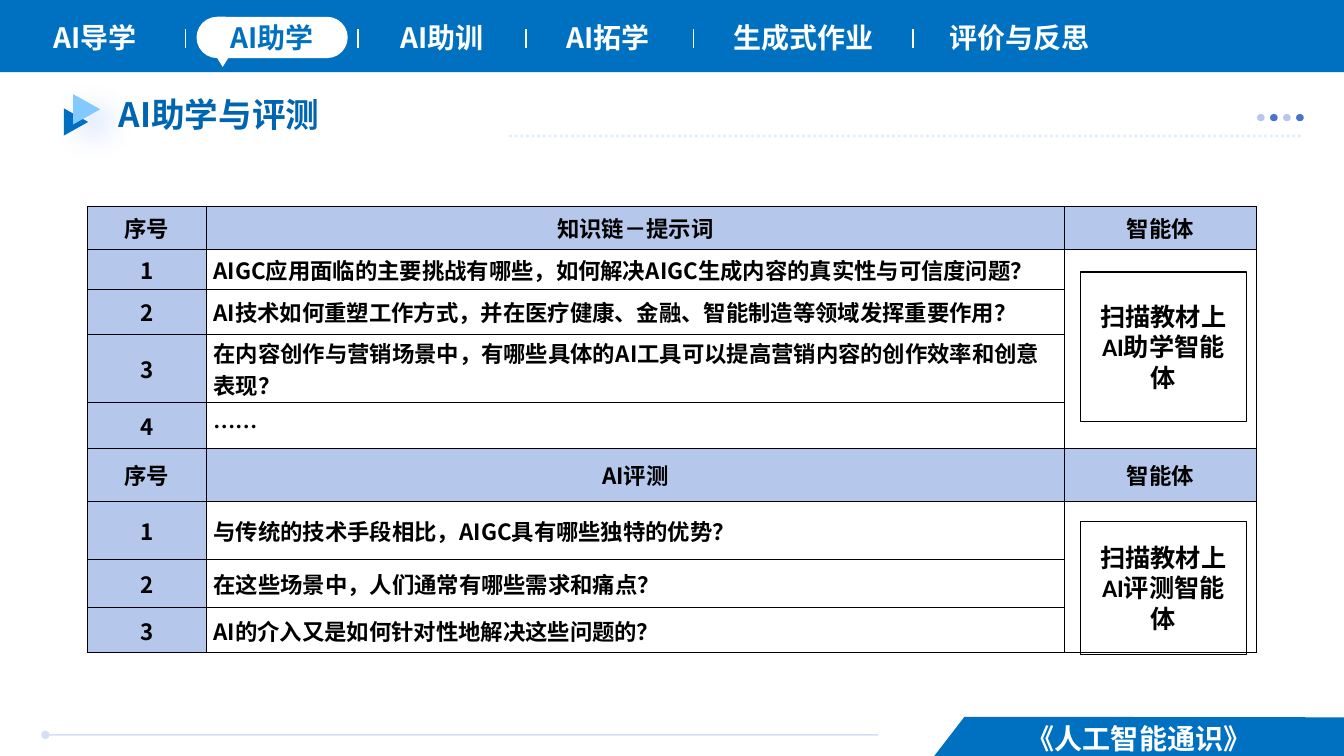
from dataclasses import dataclass

from lxml import etree
from pptx import Presentation, util as u
from pptx.dml.color import RGBColor
from pptx.enum import dml, shapes, text
from pptx.oxml import ns

Pt = u.Pt
KIND = shapes.MSO_SHAPE
ALIGN = text.PP_ALIGN
MIDDLE = text.MSO_ANCHOR.MIDDLE


@dataclass(frozen=True)
class Theme:
    blue: str = "0070C0"
    title_blue: str = "0065B0"
    sky: str = "81C9FF"
    glow: str = "1469FF"
    pale: str = "B5C7EA"
    dot_light: str = "B6C7EA"
    dot_dark: str = "4874CB"
    dotted: str = "B9D2F9"
    footer_line: str = "3D70DA"
    border: str = "000008"
    white: str = "FFFFFF"
    black: str = "000000"
    font: str = "Noto Sans CJK SC"
    card_font: str = "Calibri"
    title_size: float = 24
    tab_size: float = 20
    card_size: float = 18
    cell_size: float = 16


THEME = Theme()


@dataclass(frozen=True)
class Box:
    left: float
    top: float
    width: float
    height: float

    def inner(self, dx, dy, width, height):
        return Box(self.left + dx, self.top + dy, width, height)

    def lengths(self):
        return [Pt(n) for n in (self.left, self.top, self.width, self.height)]


def add_xml(parent, tag, **attributes):
    return etree.SubElement(parent, ns.qn(tag), attributes)


def write(frame, lines, size, color, latin=THEME.font, align=ALIGN.CENTER, spacing=None):
    for index, line in enumerate(lines.split("\n")):
        para = frame.paragraphs[0] if index == 0 else frame.add_paragraph()
        para.alignment = align
        if spacing:
            para.line_spacing = spacing
        span = para.add_run()
        span.text = line
        span.font.size, span.font.bold, span.font.name = Pt(size), True, latin
        span.font.color.rgb = RGBColor.from_string(color)
        add_xml(span.font._element, "a:ea", typeface=THEME.font)


def add_label(page, box, lines, size, color, anchor=MIDDLE, **form):
    frame = page.shapes.add_textbox(*box.lengths()).text_frame
    frame.word_wrap = True
    frame.vertical_anchor = anchor
    write(frame, lines, size, color, **form)


def paint(shape, fill=None, line=None):
    shape.shadow.inherit = False
    if fill:
        shape.fill.solid()
        shape.fill.fore_color.rgb = RGBColor.from_string(fill)
    else:
        shape.fill.background()
    if line:
        shape.line.color.rgb = RGBColor.from_string(line)
        shape.line.width = Pt(1)
    else:
        shape.line.fill.background()
    return shape


def add_shape(page, kind, box, rotation=0, **style):
    shape = paint(page.shapes.add_shape(kind, *box.lengths()), **style)
    shape.rotation = rotation
    return shape


def add_line(page, x1, y1, x2, y2, color, width=1, alpha=None, dash=None, head=None):
    line = page.shapes.add_connector(
        shapes.MSO_CONNECTOR.STRAIGHT, Pt(x1), Pt(y1), Pt(x2), Pt(y2))
    line.line.color.rgb = RGBColor.from_string(color)
    line.line.width = Pt(width)
    if dash:
        line.line.dash_style = dash
    properties = line._element.spPr
    if alpha:
        tint = properties.find(".//" + ns.qn("a:srgbClr"))
        add_xml(tint, "a:alpha", val=str(alpha * 1000))
    if head:
        add_xml(properties.find(ns.qn("a:ln")), "a:headEnd", type=head)
    add_xml(properties, "a:effectLst")


def add_glow(shape):
    effects = shape._element.spPr.find(ns.qn("a:effectLst"))
    shadow = add_xml(effects, "a:outerShdw", blurRad=str(Pt(22)), dist=str(Pt(12)),
                     dir=str(45 * 60000), algn="ctr", rotWithShape="0")
    tint = add_xml(shadow, "a:srgbClr", val=THEME.glow)
    add_xml(tint, "a:alpha", val="30000")


def build_navigation(page, box):
    add_shape(page, KIND.RECTANGLE, box, fill=THEME.blue)
    tabs = [("AI导学", 12.2, 111.6), ("AI助训", 260, 111.6), ("AI拓学", 379.4, 110.2),
            ("生成式作业", 499, 149.8), ("评价与反思", 655.2, 146.2)]
    for label, left, width in tabs:
        add_label(page, box.inner(left, 10.8, width, 31.7), label, THEME.tab_size, THEME.white)
    for x in (132.5, 255.6, 375.8, 495.4, 652.3):
        add_line(page, box.left + x, box.top + 20.9, box.left + x, box.top + 34.6, THEME.white)
    bubble = add_shape(page, KIND.ROUNDED_RECTANGLE, box.inner(140.4, 12, 108, 29.5),
                       fill=THEME.white)
    bubble.adjustments[0] = 0.5
    bubble.text_frame.vertical_anchor = MIDDLE
    write(bubble.text_frame, "AI助学", THEME.tab_size, THEME.blue)
    add_shape(page, KIND.FLOWCHART_MERGE, box.inner(154.8, 41, 8.6, 6.8), fill=THEME.white)


def build_heading(page, box):
    add_shape(page, KIND.FLOWCHART_EXTRACT, box.inner(0, 11.5, 19.4, 17.3), 90, fill=THEME.blue)
    add_glow(add_shape(page, KIND.FLOWCHART_EXTRACT, box.inner(6.5, 1.4, 21.6, 19.4), 90,
                       fill=THEME.sky))
    add_label(page, box.inner(33.1, 0, 597.6, 51.8), "AI助学与评测", THEME.title_size,
              THEME.title_blue, anchor=text.MSO_ANCHOR.TOP, align=ALIGN.LEFT, spacing=0.9)
    right, bottom = box.left + box.width, box.top + 30.2
    add_line(page, box.left + 319, bottom, right, bottom, THEME.dotted, width=2, alpha=40,
             dash=dml.MSO_LINE.ROUND_DOT)
    for index in range(4):
        color = THEME.dot_dark if index % 2 else THEME.dot_light
        add_shape(page, KIND.OVAL, box.inner(853.3 + index * 9.3, 14.4, 5.5, 5.2), fill=color)


def draw_borders(cell):
    properties = cell._tc.get_or_add_tcPr()
    for side in ("a:lnL", "a:lnR", "a:lnT", "a:lnB"):
        edge = add_xml(properties, side, w=str(Pt(0.5)))
        add_xml(add_xml(edge, "a:solidFill"), "a:srgbClr", val=THEME.border)


def fill_cell(cell, content, shaded, align):
    draw_borders(cell)
    cell.margin_left = cell.margin_right = Pt(5)
    cell.margin_top = cell.margin_bottom = 0
    cell.vertical_anchor = MIDDLE
    if shaded:
        cell.fill.solid()
        cell.fill.fore_color.rgb = RGBColor.from_string(THEME.pale)
    else:
        cell.fill.background()
    if content:
        write(cell.text_frame, content, THEME.cell_size, THEME.black, align=align)


def build_table(page, box):
    rows = [
        ("序号", "知识链－提示词", "智能体"),
        ("1", "AIGC应用面临的主要挑战有哪些，如何解决AIGC生成内容的真实性与可信度问题？", ""),
        ("2", "AI技术如何重塑工作方式，并在医疗健康、金融、智能制造等领域发挥重要作用？", ""),
        ("3", "在内容创作与营销场景中，有哪些具体的AI工具可以提高营销内容的创作效率和创意表现？", ""),
        ("4", "……", ""),
        ("序号", "AI评测", "智能体"),
        ("1", "与传统的技术手段相比，AIGC具有哪些独特的优势？", ""),
        ("2", "在这些场景中，人们通常有哪些需求和痛点？", ""),
        ("3", "AI的介入又是如何针对性地解决这些问题的？", ""),
    ]
    table = page.shapes.add_table(len(rows), 3, *box.lengths()).table
    table.first_row = table.horz_banding = False
    for column, width in zip(table.columns, (85.2, 612.6, 137.2)):
        column.width = Pt(width)
    for row, height in zip(table.rows, (30.7, 29.1, 32, 48.7, 32.9, 37.6, 41.6, 34.4, 32.2)):
        row.height = Pt(height)
    for r, row in enumerate(rows):
        heading = row[0] == "序号"
        for c, content in enumerate(row):
            align = ALIGN.LEFT if c == 1 and not heading else ALIGN.CENTER
            fill_cell(table.cell(r, c), content, heading or c == 0, align)
    for first, last in ((1, 4), (6, 8)):
        table.cell(first, 2).merge(table.cell(last, 2))
    for topic, top, height in (("助学", 47.2, 106.6), ("评测", 225.2, 95)):
        card = add_shape(page, KIND.RECTANGLE, box.inner(709.2, top, 118.8, height),
                         line=THEME.black)
        card.text_frame.word_wrap = True
        card.text_frame.vertical_anchor = MIDDLE
        write(card.text_frame, f"扫描教材上\nAI{topic}智能体", THEME.card_size, THEME.black,
              latin=THEME.card_font)


def build_footer(page, box):
    left, top = box.left + 667.4, box.top
    right, bottom = box.left + box.width, box.top + box.height
    ribbon = page.shapes.build_freeform(Pt(left + 21.6), Pt(top))
    ribbon.add_line_segments([(Pt(right), Pt(top + 0.4)), (Pt(right), Pt(bottom)),
                              (Pt(left), Pt(bottom))])
    paint(ribbon.convert_to_shape(), fill=THEME.blue)
    add_line(page, box.left + 32.4, top + 12.9, box.left + 627.1, top + 12.9,
             THEME.footer_line, alpha=22, head="oval")
    add_label(page, box.inner(667.4, -0.8, 292.6, 31.7), "《人工智能通识》",
              THEME.tab_size, THEME.white)


def main():
    deck = Presentation()
    deck.slide_width, deck.slide_height = Pt(960), Pt(540)
    page = deck.slides.add_slide(deck.slide_layouts[6])
    build_navigation(page, Box(0, 0, 960, 51.6))
    build_heading(page, Box(44.6, 67, 886.4, 51.8))
    build_table(page, Box(62.4, 147.2, 835, 319.2))
    build_footer(page, Box(0, 512, 960, 28))
    deck.save("out.pptx")


if __name__ == "__main__":
    main()
